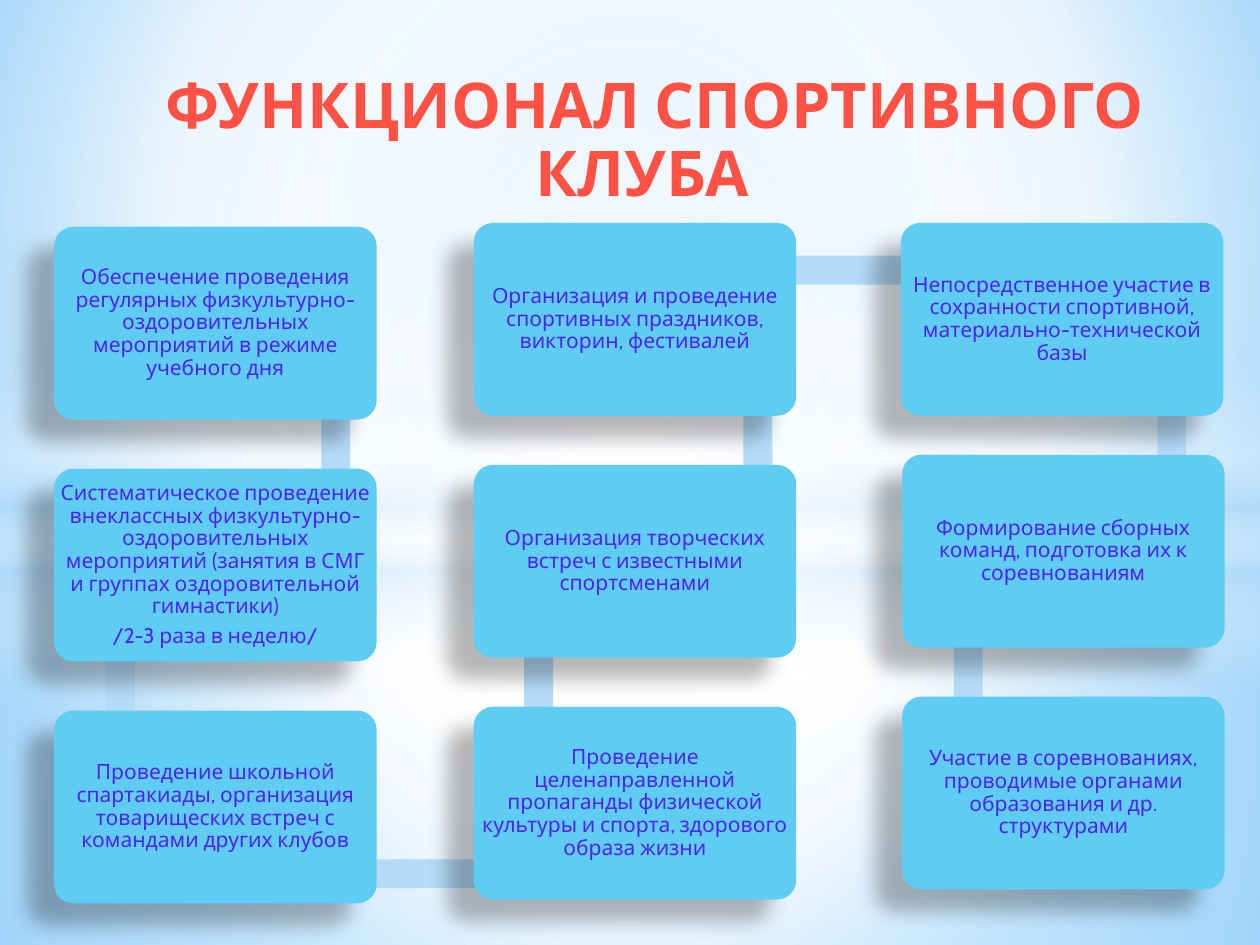
from lxml.etree import SubElement
from pptx import Presentation
from pptx.dml.color import RGBColor
from pptx.enum.shapes import MSO_SHAPE as Shape
from pptx.enum.text import MSO_ANCHOR as Anchor, PP_ALIGN as Align
from pptx.oxml import parse_xml
from pptx.oxml.ns import nsdecls, qn
from pptx.util import Inches, Pt


def paint(fill, color):
    fill.solid()
    fill.fore_color.rgb = RGBColor.from_string(color)


def gradient(owner, stops, direction):
    marks = "".join(
        f'<a:gs pos="{place * 1000}"><a:srgbClr val="{color}">'
        f'<a:alpha val="{alpha * 1000}"/></a:srgbClr></a:gs>'
        for place, color, alpha in stops
    )
    solid = owner.find(qn("a:solidFill"))
    owner.replace(solid, parse_xml(
        f'<a:gradFill {nsdecls("a")} rotWithShape="1"><a:gsLst>{marks}</a:gsLst>{direction}</a:gradFill>'
    ))


deck = Presentation()
deck.slide_width, deck.slide_height = Inches(10), Inches(7.5)
page = deck.slides.add_slide(deck.slide_layouts[6])
col, row = deck.slide_width / 100, deck.slide_height / 75

center = '<a:path path="circle"><a:fillToRect l="50000" t="50000" r="50000" b="50000"/></a:path>'
upper = '<a:path path="circle"><a:fillToRect l="20000" t="10000" r="20000" b="60000"/></a:path>'
down = '<a:lin ang="5400000" scaled="0"/>'

paint(page.background.fill, "FFFFFF")
gradient(page.background._cSld.find(".//" + qn("p:bgPr")),
         [(0, "9ED5FF", 100), (60, "FFFFFF", 100), (100, "5BB9FF", 100)], upper)

glows = [
    (Shape.RECTANGLE, 42.3, 32.7, center,
     [(0, "FFFFFF", 91), (37, "FFFFFF", 76), (100, "B4DCFA", 79)]),
    (Shape.RECTANGLE, 0, 42.3, center,
     [(0, "FFFFFF", 89), (48, "FFFFFF", 62), (100, "B4DCFA", 79)]),
    (Shape.RECTANGLE, 29, 25, down,
     [(0, "FFFFFF", 0), (29, "FFFFFF", 30), (45, "B4DCFA", 40),
      (55, "FFFFFF", 26), (65, "B4DCFA", 60), (100, "FFFFFF", 0)]),
    (Shape.OVAL, 17.5, 55.8, center, [(0, "FFFFFF", 100), (54, "FFFFFF", 0)]),
]
for kind, top, height, direction, stops in glows:
    glow = page.shapes.add_shape(kind, 0, int(top * row), deck.slide_width, int(height * row))
    glow.shadow.inherit = False
    glow.line.fill.background()
    paint(glow.fill, "FFFFFF")
    gradient(glow._element.spPr, stops, direction)

title = page.shapes.add_textbox(int(1.2 * col), int(5.4 * row), int(97.6 * col), int(11.8 * row))
title.text_frame.word_wrap = True
para = title.text_frame.paragraphs[0]
para.alignment = Align.CENTER
para.line_spacing = 0.9
indent = str(int(2 * col))
para._p.get_or_add_pPr().set("marL", indent)
para._p.get_or_add_pPr().set("indent", indent)
span = para.add_run()
span.text = "ФУНКЦИОНАЛ СПОРТИВНОГО КЛУБА"
span.font.name, span.font.size, span.font.bold = "Cabin", Pt(36), True
paint(span.font.fill, "FF5244")

thick = 2.3
bars = [
    (25.5, 26.2, thick, 19.1),
    (8.4, 41, thick, 19.1),
    (13, 68.2, 33.2, thick),
    (41.6, 40.7, thick, 19.1),
    (59, 25.8, thick, 19.1),
    (42.8, 20.3, 33.7, thick),
    (91.85, 25.9, thick, 18.4),
    (75.7, 39.9, thick, 19.1),
]
for left, top, width, height in bars:
    bar = page.shapes.add_shape(Shape.RECTANGLE, int(left * col), int(top * row),
                                int(width * col), int(height * row))
    bar.shadow.inherit = False
    bar.line.fill.background()
    paint(bar.fill, "B4DCFA")

cards = [
    (4.3, 18, ["Обеспечение проведения регулярных физкультурно-оздоровительных мероприятий в режиме учебного дня"]),
    (4.3, 37.2, ["Систематическое проведение внеклассных физкультурно-оздоровительных мероприятий "
                 "(занятия в СМГ и группах оздоровительной гимнастики)",
                 "/2-3 раза в неделю/"]),
    (4.3, 56.4, ["Проведение школьной спартакиады, организация товарищеских встреч с командами других клубов"]),
    (37.6, 56.1, ["Проведение целенаправленной пропаганды физической культуры и спорта, здорового образа жизни"]),
    (37.6, 36.9, ["Организация творческих встреч с известными спортсменами"]),
    (37.6, 17.7, ["Организация и проведение спортивных праздников, викторин, фестивалей"]),
    (71.5, 17.7, ["Непосредственное участие в сохранности спортивной, материально-технической базы"]),
    (71.6, 36.1, ["Формирование сборных команд, подготовка их к соревнованиям"]),
    (71.6, 55.3, ["Участие в соревнованиях, проводимые органами образования и др. структурами"]),
]
for left, top, lines in cards:
    card = page.shapes.add_shape(Shape.ROUNDED_RECTANGLE, int(left * col), int(top * row),
                                 int(25.6 * col), int(15.3 * row))
    card.adjustments[0] = 0.1
    card.line.fill.background()
    paint(card.fill, "5ECCF3")
    card.shadow.inherit = False
    shadow = SubElement(card._element.spPr.find(qn("a:effectLst")), qn("a:outerShdw"),
                        blurRad=str(Pt(11.8)), dist=str(Pt(19.7)), dir=str(141 * 60000),
                        algn="ctr", rotWithShape="0")
    tint = SubElement(shadow, qn("a:srgbClr"), val="000000")
    SubElement(tint, qn("a:alpha"), val="28000")
    frame = card.text_frame
    frame.word_wrap = True
    frame.vertical_anchor = Anchor.MIDDLE
    frame.margin_left = frame.margin_right = frame.margin_top = frame.margin_bottom = 0
    for number, line in enumerate(lines):
        para = frame.add_paragraph() if number else frame.paragraphs[0]
        para.alignment = Align.CENTER
        para.line_spacing = 0.9
        para.space_after = Pt(4)
        span = para.add_run()
        span.text = line
        span.font.name, span.font.size = "Cabin", Pt(12)
        paint(span.font.fill, "4F22F4")

deck.save("out.pptx")
